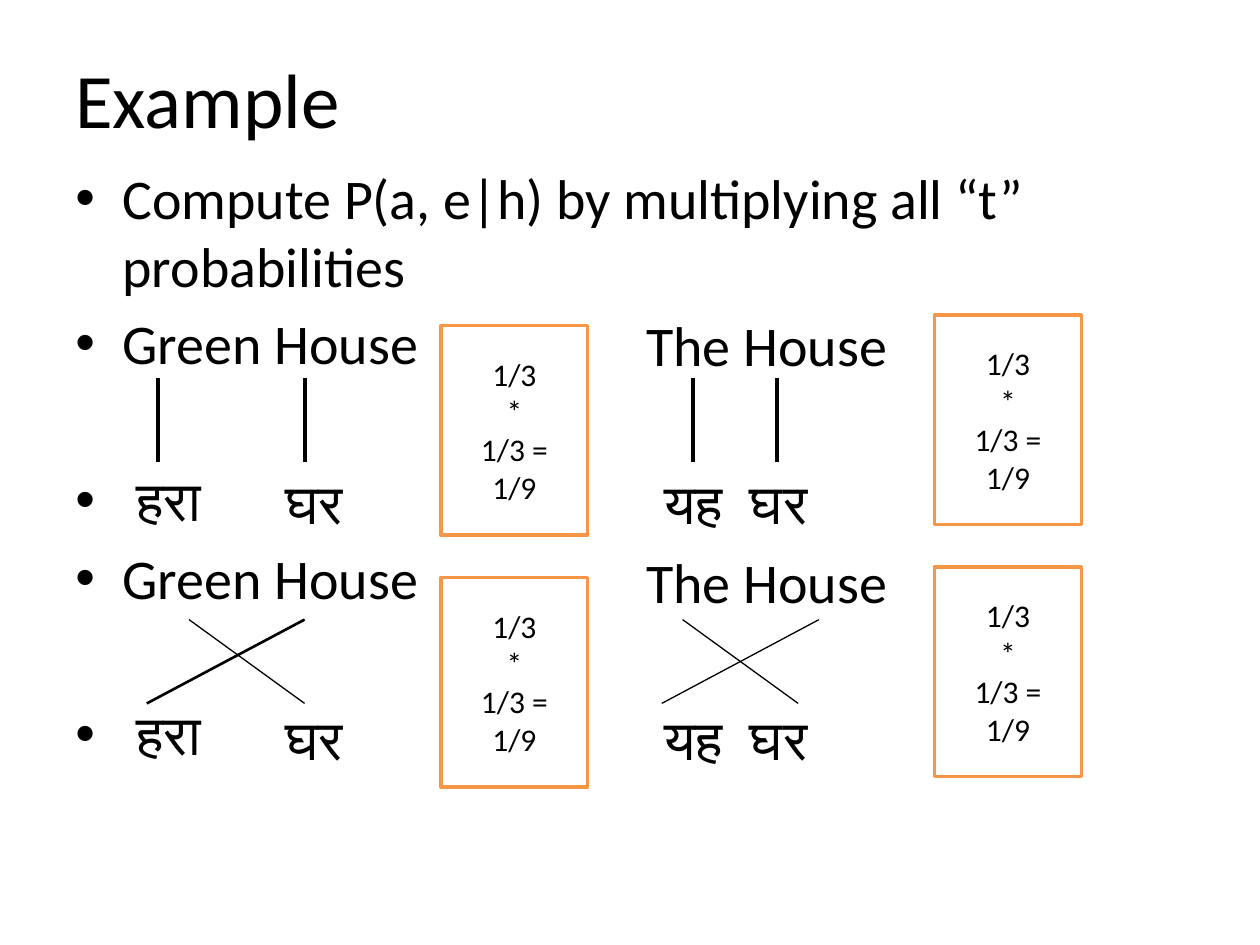
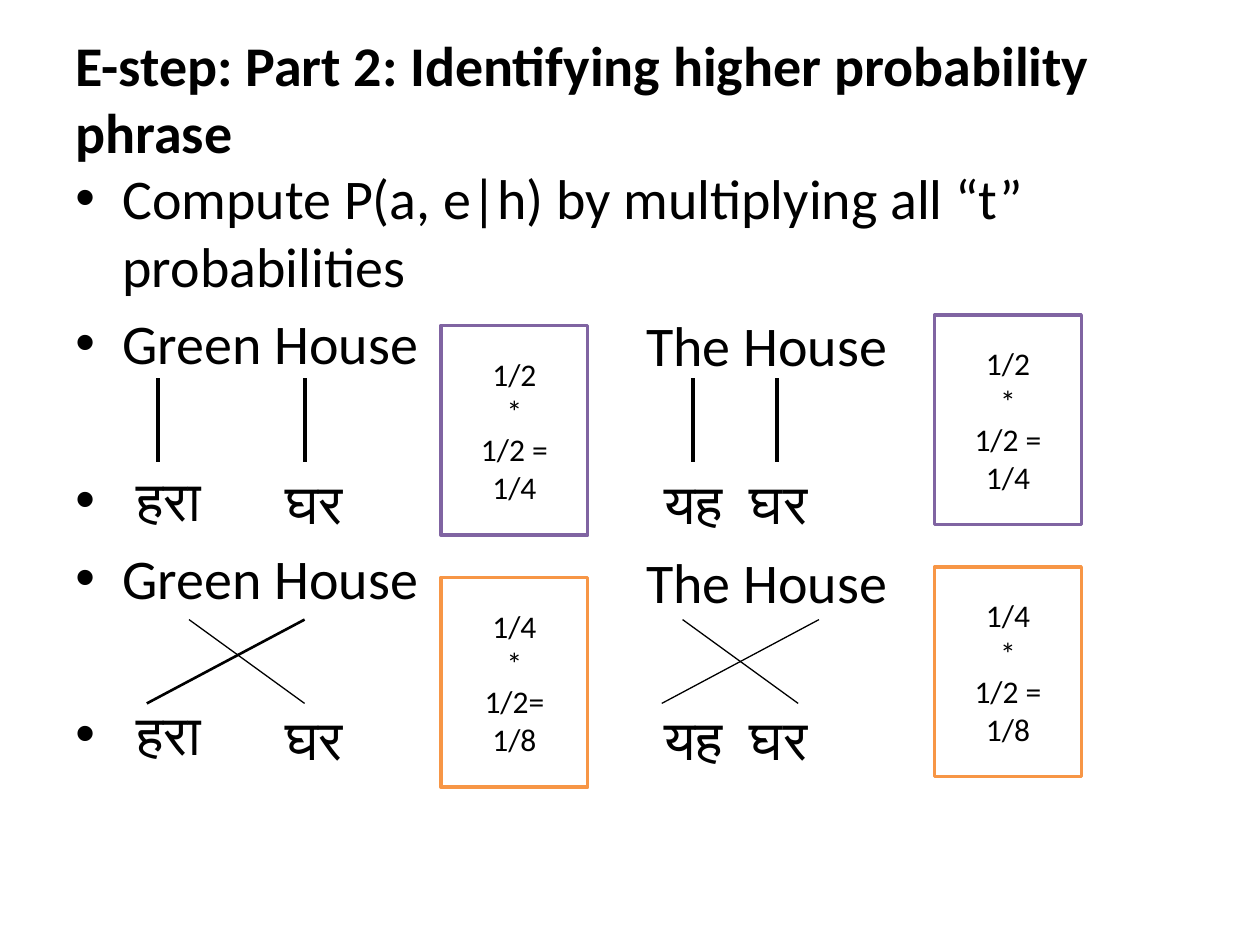
from lxml import etree
from pptx import Presentation, util as u
from pptx.dml.color import RGBColor
from pptx.enum import shapes, text
from pptx.oxml.ns import qn

BLACK, WHITE, ORANGE, PURPLE = "000000", "FFFFFF", "F79646", "8064A2"
LEFT, WIDTH = 1.27, 22.86
PAIR_STEP = 4.76            # from one alignment to the next
ENGLISH_TOP, HINDI_TOP = 6.27, 9.44


def colour(value):
    return RGBColor.from_string(value)


class Slides:
    """Holds the shared style and the page being filled; lengths in cm."""
    font = "Calibri"
    body_size = 32
    near, far = 6, 51       # space before a paragraph, in points

    def __init__(self):
        self.deck = Presentation()
        self.deck.slide_width, self.deck.slide_height = u.Cm(25.4), u.Cm(19.05)
        self.page = None

    def new_page(self):
        self.page = self.deck.slides.add_slide(self.deck.slide_layouts[6])

    def add_words(self, para, words, size, bold=False):
        span = para.add_run()
        span.text = words
        span.font.name, span.font.size, span.font.bold = self.font, u.Pt(size), bold
        span.font.color.rgb = colour(BLACK)

    def text_box(self, left, top, width, height, wrap=True):
        box = self.page.shapes.add_textbox(*map(u.Cm, (left, top, width, height)))
        box.text_frame.word_wrap = wrap
        return box.text_frame

    def title(self, words, size, bold):
        frame = self.text_box(LEFT, 0.76, WIDTH, 2.41)
        frame.vertical_anchor = text.MSO_ANCHOR.MIDDLE
        self.add_words(frame.paragraphs[0], words, size, bold)

    def bullets(self, items):
        """items: (words, space before in points)"""
        frame = self.text_box(LEFT, 3.18, WIDTH, 13.84)
        for i, (words, space) in enumerate(items):
            para = frame.add_paragraph() if i else frame.paragraphs[0]
            para.space_before = u.Pt(space)
            props = para._p.get_or_add_pPr()
            props.set("marL", str(u.Cm(0.95)))
            props.set("indent", str(u.Cm(-0.95)))
            etree.SubElement(props, qn("a:buFont"), typeface="Arial")
            etree.SubElement(props, qn("a:buChar"), char="•")
            self.add_words(para, words, self.body_size)

    def word(self, words, left, top):
        frame = self.text_box(left, top, 5.2, 1.38, wrap=False)
        frame.margin_left = frame.margin_right = 0
        frame.margin_top = frame.margin_bottom = 0
        self.add_words(frame.paragraphs[0], words, self.body_size)

    def line(self, x1, y1, x2, y2, weight):
        link = self.page.shapes.add_connector(
            shapes.MSO_CONNECTOR.STRAIGHT, *map(u.Cm, (x1, y1, x2, y2)))
        link.line.color.rgb = colour(BLACK)
        link.line.width = u.Pt(weight)
        etree.SubElement(link._element.spPr, qn("a:effectLst"))

    def product(self, left, top, rows, border):
        box = self.page.shapes.add_shape(
            shapes.MSO_SHAPE.RECTANGLE, *map(u.Cm, (left, top, 2.96, 4.23)))
        box.shadow.inherit = False
        box.fill.solid()
        box.fill.fore_color.rgb = colour(WHITE)
        box.line.color.rgb = colour(border)
        box.line.width = u.Pt(2)
        frame = box.text_frame
        frame.word_wrap = True
        frame.vertical_anchor = text.MSO_ANCHOR.MIDDLE
        for i, words in enumerate(rows):
            para = frame.add_paragraph() if i else frame.paragraphs[0]
            para.alignment = text.PP_ALIGN.CENTER
            self.add_words(para, words, 18)


def alignment_page(slides, title, size, bold, products):
    """products: border and rows for each box, down the left, then the right"""
    slides.new_page()
    slides.title(title, size, bold)

    # Phrase pairs: the first phrase is bulleted, the rest stand in columns
    pair = [("Green House", slides.near), (" हरा", slides.far)]
    slides.bullets([("Compute P(a, e|h) by multiplying all “t” probabilities",
                     slides.near)] + pair * 2)
    for shift in (0, PAIR_STEP):
        slides.word("The House", 13.03, ENGLISH_TOP + shift)
        for words, left in (("घर", 5.75), ("यह", 13.39), ("घर", 15.12)):
            slides.word(words, left, HINDI_TOP + shift)

    # Straight alignments
    for x in (3.18, 6.14, 13.97, 15.66):
        slides.line(x, 7.62, x, 9.31, 2.25)
    # Crossed alignments
    for x_top, x_bottom, weight in ((6.14, 2.96, 1.5), (16.51, 13.34, 0.75),
                                    (3.81, 6.14, 0.75), (13.76, 16.09, 0.75)):
        slides.line(x_top, 12.49, x_bottom, 14.18, weight)

    # Probability products
    places = [(left, top + step) for left, top in ((8.89, 6.56), (18.84, 6.35))
              for step in (0, 5.08)]
    for (left, top), (border, rows) in zip(places, products):
        slides.product(left, top, rows, border)


def main():
    slides = Slides()
    ninth = (ORANGE, ("1/3", "*", "1/3 =", "1/9"))
    alignment_page(slides, "Example", 44, False, [ninth] * 4)

    quarter = (PURPLE, ("1/2", "*", "1/2 =", "1/4"))
    alignment_page(
        slides, "E-step: Part 2: Identifying higher probability phrase", 32, True,
        [quarter, (ORANGE, ("1/4", "*", "1/2=", "1/8")),
         quarter, (ORANGE, ("1/4", "*", "1/2 =", "1/8"))])
    slides.deck.save("out.pptx")


if __name__ == "__main__":
    main()
